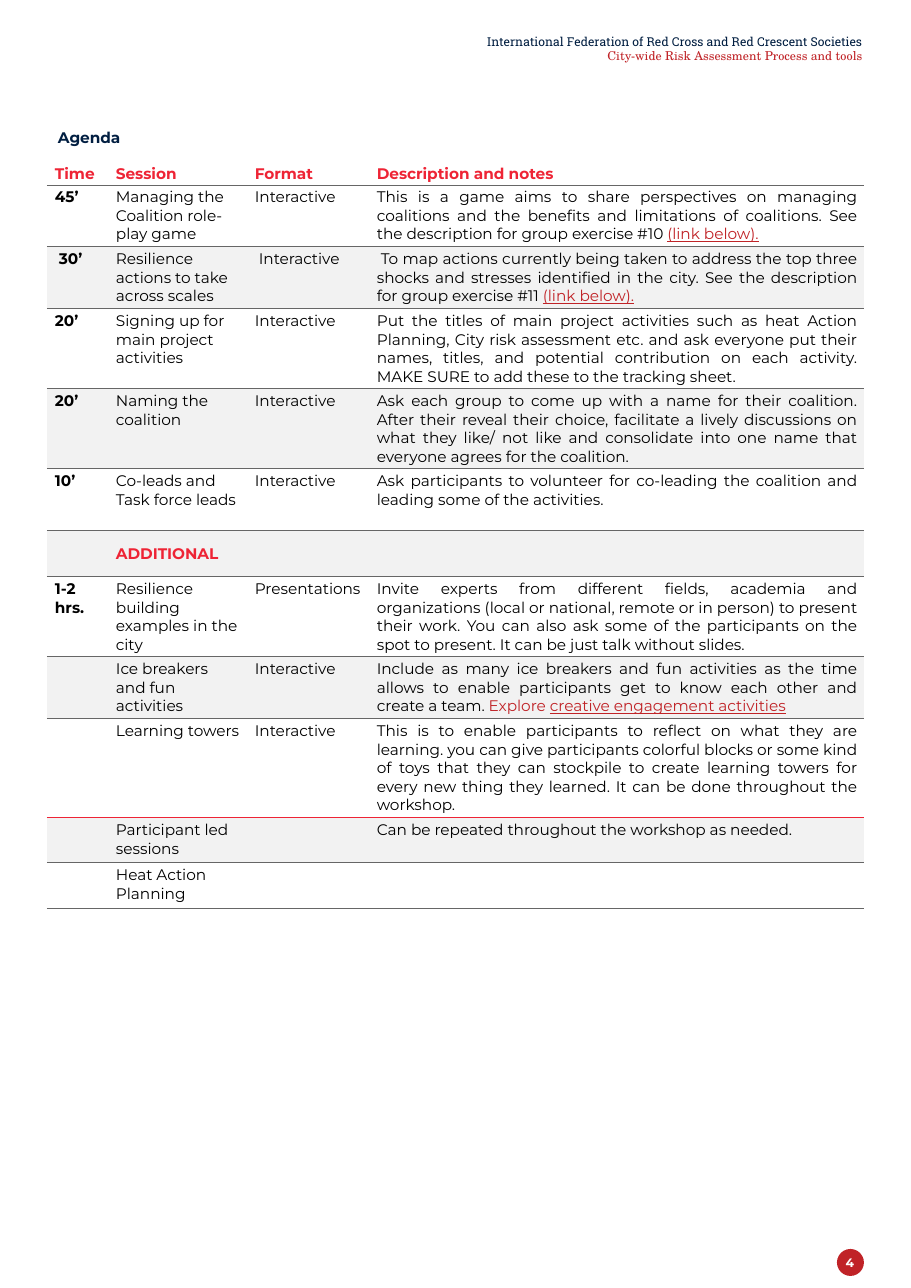
import pptx
import pptx.dml.color
import pptx.enum.shapes
import pptx.enum.text
import pptx.oxml
import pptx.oxml.ns
import pptx.util

PX = 914400 / 110.2
COLORS = {"navy": "011E41", "red": "EE2435", "crimson": "C02327", "black": "000000",
          "white": "FFFFFF", "off_white": "FEFFFE", "band": "F2F2F2", "rule": "666666"}
BODY_FONT = "Montserrat"
ALIGN = pptx.enum.text.PP_ALIGN
MIDDLE = pptx.enum.text.MSO_ANCHOR.MIDDLE
TOP = pptx.enum.text.MSO_ANCHOR.TOP

COLUMN_WIDTHS = [61, 139, 122, 495]
HEADINGS = ["Time", "Session", "Format", "Description and notes"]
LINK = ("(link below).", "crimson", True)

# Each session: height, time, name, format, description runs
SESSIONS = [
    (62, "45’", "Managing the Coalition role-play game", "Interactive",
     [("This is a game aims to share perspectives on managing coalitions and the benefits "
       "and limitations of coalitions. See the description for group exercise #10 ",), LINK]),
    (62, "30’", "Resilience actions to take across scales", "Interactive",
     [("To map actions currently being taken to address the top three shocks and stresses "
       "identified in the city. See the description for group exercise #11 ",), LINK]),
    (80, "20’", "Signing up for main project activities", "Interactive",
     [("Put the titles of main project activities such as heat Action Planning, City risk "
       "assessment etc. and ask everyone put their names, titles, and potential contribution "
       "on each activity. MAKE SURE to add these to the tracking sheet.",)]),
    (80, "20’", "Naming the coalition", "Interactive",
     [("Ask each group to come up with a name for their coalition. After their reveal their "
       "choice, facilitate a lively discussions on what they like/ not like and consolidate "
       "into one name that everyone agrees for the coalition.",)]),
    (62, "10’", "Co-leads and Task force leads", "Interactive",
     [("Ask participants to volunteer for co-leading the coalition and leading some of the "
       "activities.",)]),
    (46, "", "ADDITIONAL", "", []),
    (80, "1-2 hrs.", "Resilience building examples in the city", "Presentations",
     [("Invite experts from different fields, academia and organizations (local or national, "
       "remote or in person) to present their work. You can also ask some of the participants "
       "on the spot to present. It can be just talk without slides.",)]),
    (62, "", "Ice breakers and fun activities", "Interactive",
     [("Include as many ice breakers and fun activities as the time allows to enable "
       "participants get to know each other and create a team. ",),
      ("Explore ", "crimson"), ("creative engagement activities", "crimson", True)]),
    (99, "", "Learning towers", "Interactive",
     [("This is to enable participants to reflect on what they are learning. you can give "
       "participants colorful blocks or some kind of toys that they can stockpile to create "
       "learning towers for every new thing they learned. It can be done throughout the "
       "workshop.",)]),
    (45, "", "Participant led sessions", "",
     [("Can be repeated throughout the workshop as needed.",)]),
    (46, "", "Heat Action Planning", "", []),
]


def px(length):
    return pptx.util.Emu(round(length * PX))


def rgb(name):
    return pptx.dml.color.RGBColor.from_string(COLORS[name])


def add_run(paragraph, text, color="black", underline=False, bold=False,
            size=10, font=BODY_FONT):
    run = paragraph.add_run()
    run.text = text
    run.font.name = font
    run.font.size = pptx.util.Pt(size)
    run.font.bold = bold
    run.font.underline = underline
    run.font.color.rgb = rgb(color)


def set_margins(area, left, top, right, bottom):
    area.margin_left, area.margin_top = px(left), px(top)
    area.margin_right, area.margin_bottom = px(right), px(bottom)


def add_text(slide, box, margins, anchor, align, lines):
    frame = slide.shapes.add_textbox(*map(px, box)).text_frame
    frame.word_wrap = True
    frame.vertical_anchor = anchor
    set_margins(frame, *margins)
    for index, (text, style) in enumerate(lines):
        paragraph = frame.add_paragraph() if index else frame.paragraphs[0]
        paragraph.alignment = align
        add_run(paragraph, text, **style)


def style_cell(cell, top=None, bottom=None, fill=None):
    properties = cell._tc.get_or_add_tcPr()
    for side, color in (("L", None), ("R", None), ("T", top), ("B", bottom)):
        paint = (f'<a:solidFill><a:srgbClr val="{COLORS[color]}"/></a:solidFill>'
                 if color else "<a:noFill/>")
        properties.append(pptx.oxml.parse_xml(
            f'<a:ln{side} {pptx.oxml.ns.nsdecls("a")} w="9525">{paint}</a:ln{side}>'))
    if fill:
        cell.fill.solid()
        cell.fill.fore_color.rgb = rgb(fill)
    else:
        cell.fill.background()


def write_cell(cell, runs, align=ALIGN.JUSTIFY, bold=False, anchor=TOP,
               margins=(8, 3, 7, 2), indent=0):
    set_margins(cell, *margins)
    cell.vertical_anchor = anchor
    paragraph = cell.text_frame.paragraphs[0]
    paragraph.alignment = align
    paragraph.font.size = pptx.util.Pt(10)
    if indent:
        properties = paragraph._p.get_or_add_pPr()
        properties.set("marL", "0")
        properties.set("indent", str(px(indent)))
    for run in runs:
        add_run(paragraph, *run, bold=bold)


def add_agenda(slide):
    heights = [46, 21] + [session[0] for session in SESSIONS]
    agenda = slide.shapes.add_table(len(heights), len(COLUMN_WIDTHS), px(47), px(118),
                                    px(sum(COLUMN_WIDTHS)), px(sum(heights))).table
    agenda.first_row = agenda.horz_banding = False
    for column, width in zip(agenda.columns, COLUMN_WIDTHS):
        column.width = px(width)
    for row, height in zip(agenda.rows, heights):
        row.height = px(height)

    # Title and headings
    for column, heading in enumerate(HEADINGS):
        style_cell(agenda.cell(0, column))
        style_cell(agenda.cell(1, column), bottom="rule")
        write_cell(agenda.cell(1, column), [(heading, "red")], bold=True,
                   anchor=MIDDLE, margins=(8, 0, 7, 0))
    agenda.cell(0, 0).merge(agenda.cell(0, 3))
    write_cell(agenda.cell(0, 0), [("Agenda", "navy")], ALIGN.LEFT, bold=True,
               margins=(11, 11, 11, 11))

    # Sessions, with every second row shaded
    for index, (_, time, name, form, description) in enumerate(SESSIONS):
        row = index + 2
        section = name == "ADDITIONAL"
        top = "red" if name == "Participant led sessions" else "rule"
        bottom = "red" if name == "Learning towers" else "rule"
        indent = 4 if time == "30’" else 0
        contents = [[(time,)] if time else [], [(name, "red" if section else "black")],
                    [(form,)] if form else [], description]
        for column, runs in enumerate(contents):
            cell = agenda.cell(row, column)
            style_cell(cell, top, bottom, "band" if index % 2 else None)
            is_name = column == 1
            write_cell(cell, runs, ALIGN.LEFT if is_name else ALIGN.JUSTIFY,
                       bold=column == 0 or (is_name and section),
                       anchor=MIDDLE if section else TOP,
                       indent=0 if is_name else indent)
        if section:
            agenda.cell(row, 1).merge(agenda.cell(row, 2))


def add_page_number(slide):
    badge = slide.shapes.add_shape(pptx.enum.shapes.MSO_SHAPE.OVAL,
                                   px(837), px(1249), px(27), px(27))
    badge.shadow.inherit = False
    badge.fill.solid()
    badge.fill.fore_color.rgb = rgb("crimson")
    badge.line.fill.background()
    add_text(slide, (833, 1252, 34, 22), (0, 0, 0, 0), MIDDLE, ALIGN.CENTER,
             [("4", {"color": "off_white", "bold": True, "size": 8})])


def main():
    deck = pptx.Presentation()
    deck.slide_width, deck.slide_height = px(911), px(1288)
    slide = deck.slides.add_slide(deck.slide_layouts[6])

    # Page header
    add_text(slide, (356, 34, 507, 35), (11, 0, 0, 11), TOP, ALIGN.RIGHT, [
        ("International Federation of Red Cross and Red Crescent Societies",
         {"color": "navy", "size": 8, "font": "Roboto Slab"}),
        ("City-wide Risk Assessment Process and tools",
         {"color": "crimson", "size": 8, "font": "TeX Gyre Schola"})])

    add_agenda(slide)
    add_page_number(slide)
    deck.save("out.pptx")


if __name__ == "__main__":
    main()
